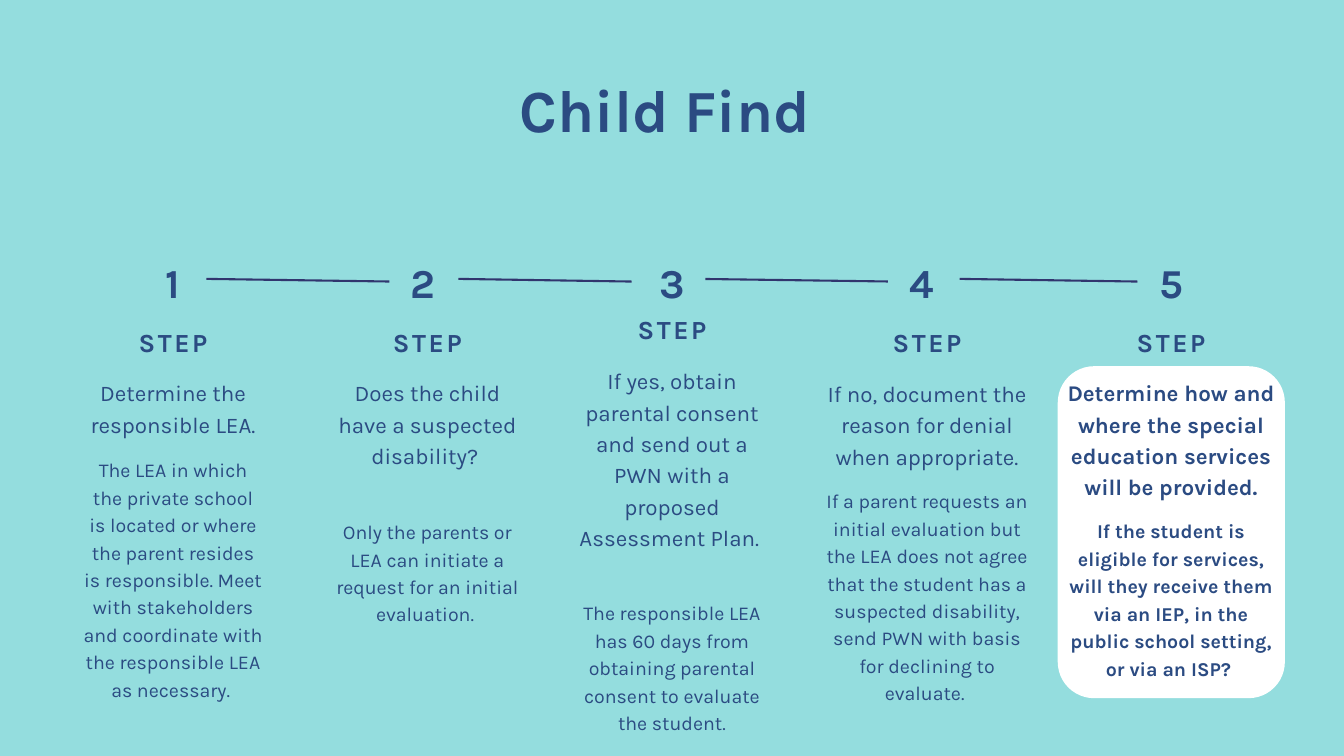
"""Build the Child Find slide: a five-step timeline with explanations."""
from collections import namedtuple

from lxml.etree import SubElement
from pptx import Presentation
from pptx.dml.color import RGBColor
from pptx.enum.shapes import MSO_CONNECTOR as CONNECTOR, MSO_SHAPE as SHAPE
from pptx.enum.text import MSO_ANCHOR as ANCHOR, PP_ALIGN as ALIGN
from pptx.oxml.ns import qn
from pptx.util import Inches, Pt

FONT = "Karla"
AQUA = RGBColor(0x94, 0xDD, 0xDE)
BLUE = RGBColor(0x2B, 0x4B, 0x82)
NAVY = RGBColor(0x31, 0x35, 0x6E)
WHITE = RGBColor(0xFF, 0xFF, 0xFF)

NUMBER_LEFT, NUMBER_PITCH, NUMBER_SIZE = 2.08, 3.7125, 0.99
TIMELINE = [(3.07, 5.83), (6.82, 9.4), (10.39, 13.29), (14.28, 16.93)]

Step = namedtuple("Step", "left width label_top head_top head body_top body bold")
STEPS = [
    Step(1.23, 2.69, 4.78, 5.58, "Determine the responsible LEA.", 6.76,
         "The LEA in which the private school is located or where the parent "
         "resides is responsible. Meet with stakeholders and coordinate with "
         "the responsible LEA as necessary. ", False),
    Step(4.97, 2.78, 4.78, 5.58, "Does the child have a suspected disability? ", 7.68,
         "Only the parents or LEA can initiate a request for an initial "
         "evaluation. ", False),
    Step(8.55, 2.9, 4.59, 5.4,
         "If yes, obtain parental consent and send out a PWN with a proposed "
         "Assessment Plan. ", 8.89,
         "The responsible LEA has 60 days from obtaining parental consent to "
         "evaluate the student.", False),
    Step(12.25, 3.09, 4.78, 5.59,
         "If no, document the reason for denial when appropriate.", 7.22,
         "If a parent requests an initial evaluation but the LEA does not agree "
         "that the student has a suspected disability, send PWN with basis for "
         "declining to evaluate. ", False),
    Step(15.88, 3.09, 4.78, 5.58,
         "Determine how and where the special education services will be "
         "provided.", 7.67,
         "If the student is eligible for services, will they receive them via "
         "an IEP, in the public school setting, or via an ISP? ", True),
]


def add_text(s, text, left, top, width, height, size, leading,
             bold=False, spacing=0, anchor=ANCHOR.TOP):
    """Add centred text with a fixed line height and letter spacing in points."""
    sp = s.shapes.add_textbox(Inches(left), Inches(top), Inches(width), Inches(height))
    tf = sp.text_frame
    tf.word_wrap = True
    tf.vertical_anchor = anchor
    tf.margin_left = tf.margin_right = tf.margin_top = tf.margin_bottom = 0
    p = tf.paragraphs[0]
    p.text = text
    p.alignment = ALIGN.CENTER
    p.line_spacing = Pt(leading)
    font = p.runs[0].font
    font.name, font.size, font.bold = FONT, Pt(size), bold
    font.color.rgb = BLUE
    if spacing:
        p.runs[0]._r.get_or_add_rPr().set("spc", str(round(spacing * 100)))


def add_panel(s, kind, left, top, width, height, color):
    """Add a filled shape without outline or shadow."""
    sp = s.shapes.add_shape(kind, Inches(left), Inches(top), Inches(width), Inches(height))
    sp.shadow.inherit = False
    sp.fill.solid()
    sp.fill.fore_color.rgb = color
    sp.line.fill.background()
    return sp


def add_timeline_line(s, start, end):
    """Add one slightly sloping line between two step numbers."""
    line = s.shapes.add_connector(CONNECTOR.STRAIGHT, Inches(start), Inches(4.15),
                                  Inches(end), Inches(4.19))
    line.line.color.rgb = NAVY
    line.line.width = Pt(2.25)
    SubElement(line._element.spPr, qn("a:effectLst"))


def add_number(s, index):
    """Add a step number, on a patch that hides the line ending behind it."""
    left = NUMBER_LEFT + index * NUMBER_PITCH
    if index:
        add_panel(s, SHAPE.RECTANGLE, left, 3.69, NUMBER_SIZE, 0.97, AQUA)
    add_text(s, str(index + 1), left, 3.6, NUMBER_SIZE, 1.06, 44, 61.6,
             bold=True, spacing=7.5, anchor=ANCHOR.MIDDLE)


def add_step(s, step):
    """Add the label, heading and explanation of one step."""
    left, width = step.left, step.width
    add_text(s, "STEP", left, step.label_top, width, 0.51, 28, 39.2, True, 2.8)
    add_text(s, step.head, left, step.head_top, width,
             step.body_top - step.head_top - 0.3, 24, 33.6, step.bold)
    add_text(s, step.body, left, step.body_top, width,
             10.4 - step.body_top if step.body_top < 8 else 2.02, 21, 29.4, step.bold)


def main():
    """Build and save the slide."""
    prs = Presentation()
    prs.slide_width, prs.slide_height = Inches(20), Inches(11.25)
    s = prs.slides.add_slide(prs.slide_layouts[6])
    s.background.fill.solid()
    s.background.fill.fore_color.rgb = AQUA

    for start, end in TIMELINE:
        add_timeline_line(s, start, end)
    for index in range(len(STEPS)):
        add_number(s, index)
    card = add_panel(s, SHAPE.ROUNDED_RECTANGLE, 15.74, 5.45, 3.38, 4.94, WHITE)
    card.adjustments[0] = 0.16
    add_text(s, "Child Find ", 1.18, 1.22, 17.65, 0.97, 64, 67.2, bold=True)
    for step in STEPS:
        add_step(s, step)

    prs.save("out.pptx")


if __name__ == "__main__":
    main()
